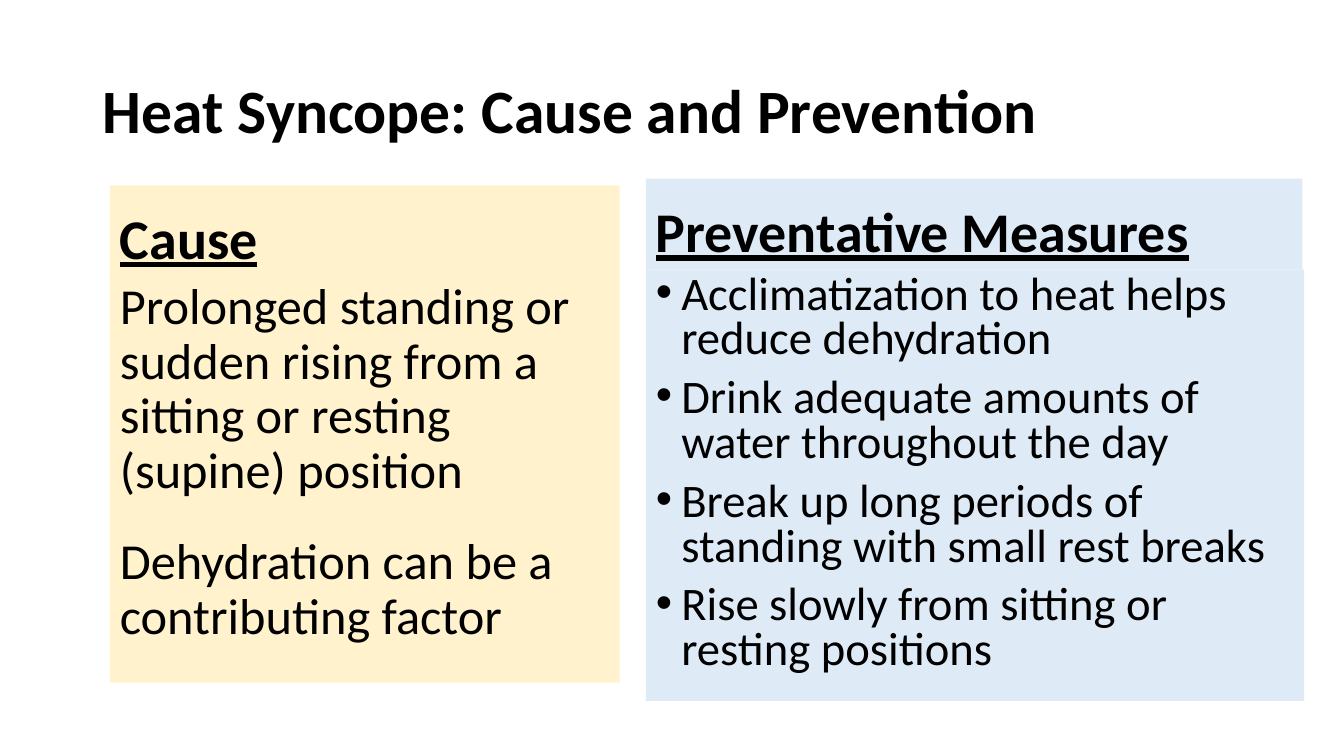
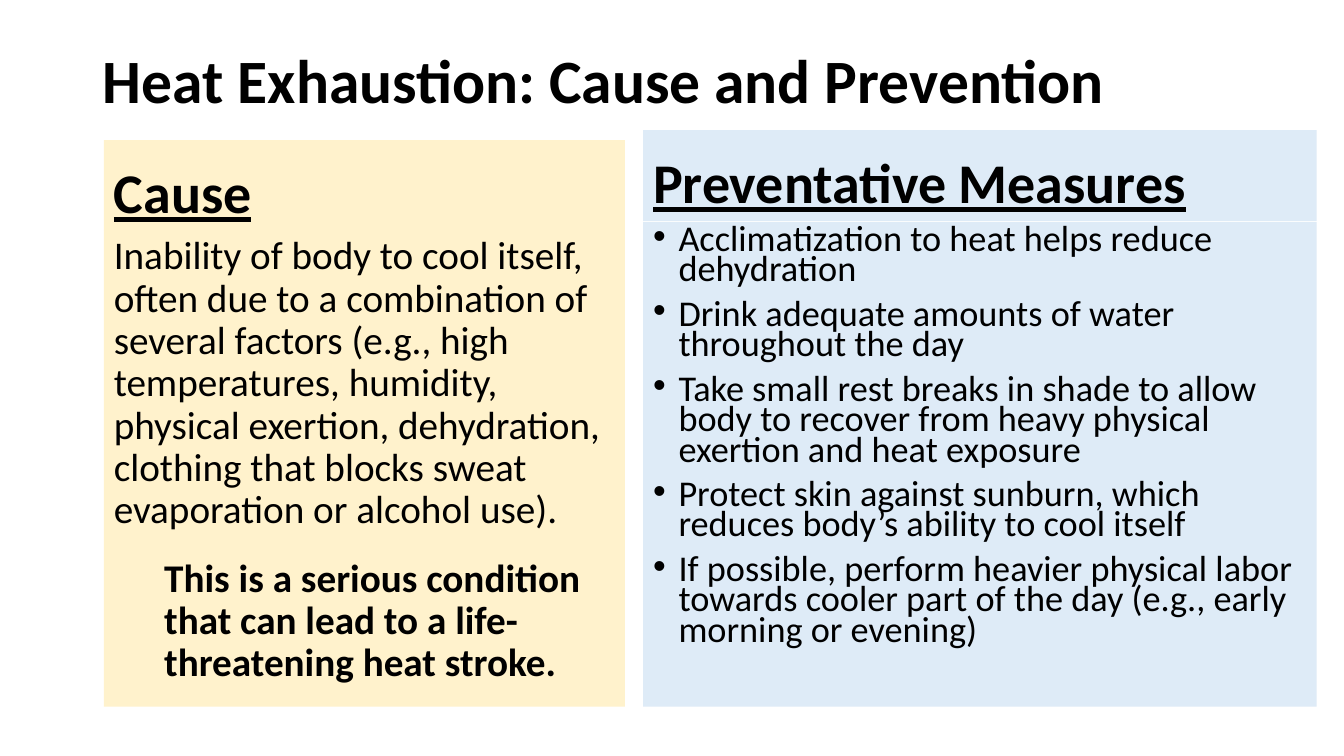
"""Build two slides comparing causes and preventative measures for heat illness."""
from lxml.etree import SubElement
from pptx import Presentation
from pptx.dml.color import RGBColor
from pptx.enum.shapes import MSO_SHAPE
from pptx.enum.text import MSO_ANCHOR, MSO_AUTO_SIZE, PP_ALIGN
from pptx.oxml.ns import qn
from pptx.util import Cm, Pt

COLOURS = {"text": "000000", "cause": "FFF2CC", "prevention": "DEEBF7"}
FONT = "Calibri"
HEADING_HEIGHT = 2.29
BULLET_INDENT = 0.64

SLIDES = [
    {
        "title": "Heat Syncope: Cause and Prevention",
        "title_height": 3.68,
        "panels": [
            {
                "heading": "Cause", "fill": "cause", "left": 2.77, "top": 4.67,
                "width": 12.85, "body_width": 12.85, "body_height": 10.24,
                "gap": 0, "size": 36, "spacing": 0.9, "bullets": False,
                "paragraphs": [
                    {"text": "Prolonged standing or sudden rising from a sitting or resting (supine) position"},
                    {"text": "Dehydration can be a contributing factor", "before": 26.5},
                ],
            },
            {
                "heading": "Preventative Measures", "fill": "prevention", "left": 16.28, "top": 4.5,
                "width": 16.54, "body_width": 16.59, "body_height": 10.87,
                "gap": 0, "size": 33.3, "spacing": 0.8, "bullets": True,
                "paragraphs": [
                    {"text": "Acclimatization to heat helps reduce dehydration"},
                    {"text": "Drink adequate amounts of water throughout the day"},
                    {"text": "Break up long periods of standing with small rest breaks"},
                    {"text": "Rise slowly from sitting or resting positions"},
                ],
            },
        ],
    },
    {
        "title": "Heat Exhaustion: Cause and Prevention",
        "title_height": 2.16,
        "panels": [
            {
                "heading": "Cause", "fill": "cause", "left": 2.62, "top": 3.53,
                "width": 13.13, "body_width": 13.13, "body_height": 11.99,
                "gap": 0, "size": 28, "spacing": 0.9, "bullets": False,
                "paragraphs": [
                    {"text": "Inability of body to cool itself, often due to a combination of several "
                             "factors (e.g., high temperatures, humidity, physical exertion, dehydration, "
                             "clothing that blocks sweat evaporation or alcohol use)."},
                    {"text": "This is a serious condition that can lead to a life-threatening heat stroke.",
                     "before": 18.5, "bold": True, "indent": 1.27},
                ],
            },
            {
                "heading": "Preventative Measures", "fill": "prevention", "left": 16.21, "top": 3.28,
                "width": 16.97, "body_width": 16.97, "body_height": 12.22,
                "gap": 0.02, "size": 25.9, "spacing": 0.7, "bullets": True,
                "paragraphs": [
                    {"text": "Acclimatization to heat helps reduce dehydration"},
                    {"text": "Drink adequate amounts of water throughout the day"},
                    {"text": "Take small rest breaks in shade to allow body to recover from heavy "
                             "physical exertion and heat exposure"},
                    {"text": "Protect skin against sunburn, which reduces body’s ability to cool itself"},
                    {"text": "If possible, perform heavier physical labor towards cooler part of the day "
                             "(e.g., early morning or evening)"},
                ],
            },
        ],
    },
]


def add_panel(page, left, top, width, height, fill, anchor):
    box = page.shapes.add_shape(MSO_SHAPE.RECTANGLE, Cm(left), Cm(top), Cm(width), Cm(height))
    box.shadow.inherit = False
    box.fill.solid()
    box.fill.fore_color.rgb = RGBColor.from_string(COLOURS[fill])
    box.line.fill.background()
    box.text_frame.word_wrap = True
    box.text_frame.vertical_anchor = anchor
    return box


def write(para, text, size, spacing=0.9, before=10, bold=False, underline=False):
    para.alignment = PP_ALIGN.LEFT
    para.line_spacing = spacing
    para.space_before = Pt(before)
    span = para.add_run()
    span.text = text
    span.font.name = FONT
    span.font.size = Pt(size)
    span.font.bold = bold
    span.font.underline = underline
    span.font.color.rgb = RGBColor.from_string(COLOURS["text"])


deck = Presentation()
deck.slide_width = Cm(33.87)
deck.slide_height = Cm(19.05)

for content in SLIDES:
    page = deck.slides.add_slide(deck.slide_layouts[5])
    title = page.shapes.title
    title.left, title.top = Cm(2.34), Cm(1.02)
    title.width, title.height = Cm(29.21), Cm(content["title_height"])
    title.text_frame.word_wrap = True
    title.text_frame.auto_size = MSO_AUTO_SIZE.NONE
    title.text_frame.vertical_anchor = MSO_ANCHOR.MIDDLE
    write(title.text_frame.paragraphs[0], content["title"], 44, before=0, bold=True)

    for panel in content["panels"]:
        heading = add_panel(page, panel["left"], panel["top"], panel["width"],
                            HEADING_HEIGHT, panel["fill"], MSO_ANCHOR.BOTTOM)
        write(heading.text_frame.paragraphs[0], panel["heading"], 40, bold=True, underline=True)

        body_top = panel["top"] + HEADING_HEIGHT + panel["gap"]
        body = add_panel(page, panel["left"], body_top, panel["body_width"],
                         panel["body_height"], panel["fill"], MSO_ANCHOR.TOP)
        for index, item in enumerate(panel["paragraphs"]):
            frame = body.text_frame
            para = frame.add_paragraph() if index else frame.paragraphs[0]
            write(para, item["text"], panel["size"], panel["spacing"],
                  item.get("before", 10), item.get("bold", False))
            properties = para._p.get_or_add_pPr()
            if panel["bullets"]:
                properties.set("marL", str(Cm(BULLET_INDENT)))
                properties.set("indent", str(-Cm(BULLET_INDENT)))
                SubElement(properties, qn("a:buFont"), typeface="Arial")
                SubElement(properties, qn("a:buChar"), char="•")
            elif "indent" in item:
                properties.set("marL", str(Cm(item["indent"])))

deck.save("out.pptx")
